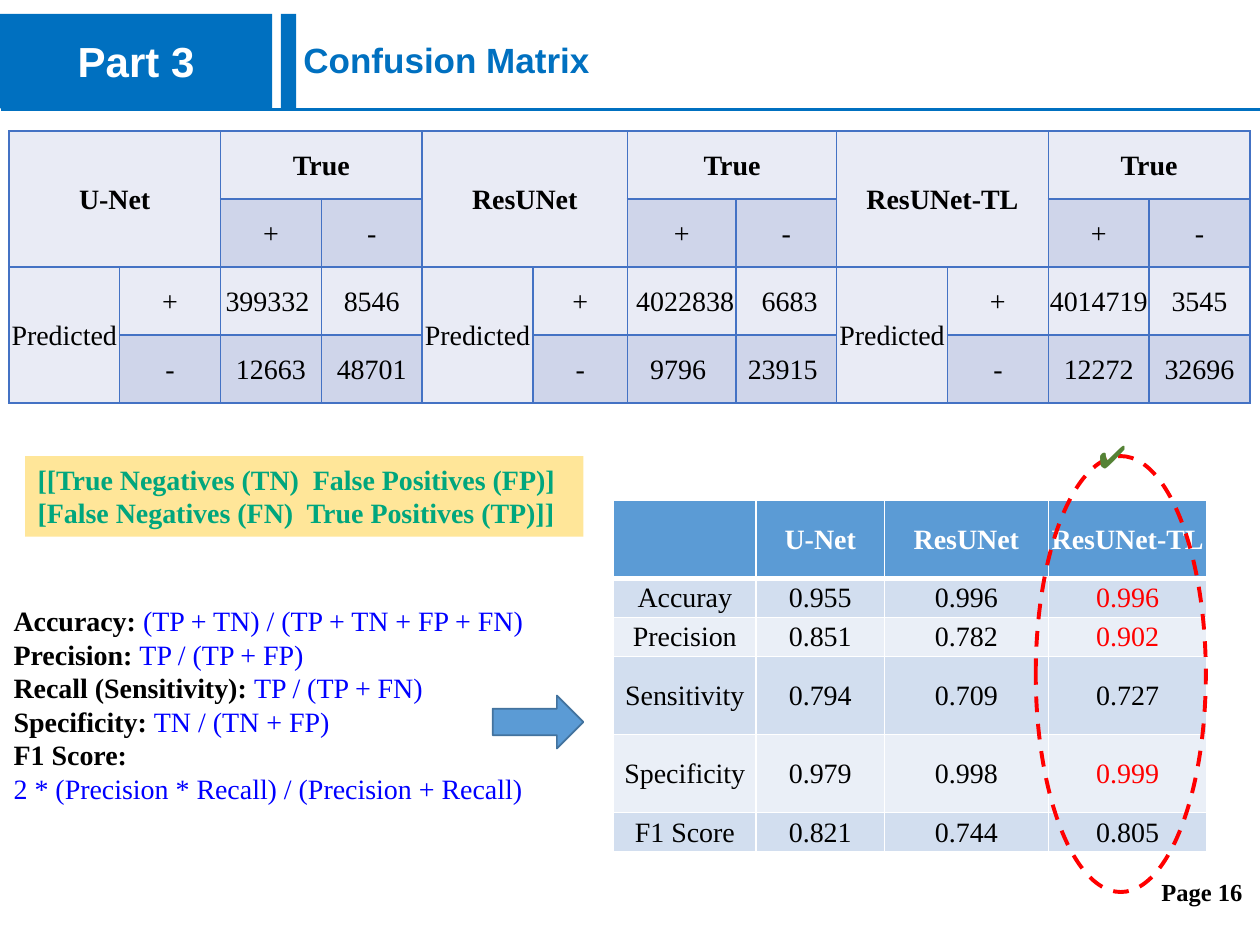
from dataclasses import dataclass

from lxml import etree
from pptx import Presentation
from pptx import util as u
from pptx.dml.color import RGBColor
from pptx.enum import dml, shapes, text
from pptx.oxml.ns import qn

COLUMNS, ROWS = 100, 75
CELL = u.Inches(10) // COLUMNS  # the grid is square

COLORS = {
    "brand": "0070C0", "white": "FFFFFF", "black": "000000",
    "formula": "0000FF", "best": "FF0000", "tick": "548235",
    "legend": "FFE699", "legend_text": "00A67D",
    "matrix_line": "4472C4", "matrix_odd": "E9EBF5", "matrix_even": "CFD5EA",
    "accent": "5B9BD5", "accent_line": "43739E",
    "score_odd": "D2DEEF", "score_even": "EAEFF7",
}
SANS, SERIF = "Arial", "Times New Roman"

# model, its four column widths, counts for predicted + and -
MODELS = [
    ("U-Net", (8.8, 8, 8, 8), (("399332 ", "8546"), ("12663", "48701"))),
    ("ResUNet", (8.8, 7.5, 8.6, 8), ((" 4022838", " 6683"), ("9796 ", "23915 "))),
    ("ResUNet-TL", (8.8, 8, 8, 8), (("4014719", "3545"), ("12272", "32696"))),
]
# metric, row height, score of each model, whether the last model is best
SCORES = [
    ("Accuray", 3.1, ("0.955", "0.996", "0.996"), True),
    ("Precision", 3.1, ("0.851", "0.782", "0.902"), True),
    ("Sensitivity", 6.2, ("0.794", "0.709", "0.727"), False),
    ("Specificity", 6.2, ("0.979", "0.998", "0.999"), True),
    ("F1 Score", 3.1, ("0.821", "0.744", "0.805"), False),
]
FORMULAS = [
    ("Accuracy: ", "(TP + TN) / (TP + TN + FP + FN)"),
    ("Precision: ", "TP / (TP + FP)"),
    ("Recall (Sensitivity): ", "TP / (TP + FN)"),
    ("Specificity: ", "TN / (TN + FP)"),
    ("F1 Score:", ""),
    ("", "2 * (Precision * Recall) / (Precision + Recall)"),
]


@dataclass
class Box:
    """An area in grid columns and rows."""
    x: float
    y: float
    w: float
    h: float

    def area(self, dx, dy, w, h):
        return Box(self.x + dx, self.y + dy, w, h)

    def emu(self):
        return [grid(n) for n in (self.x, self.y, self.w, self.h)]


def grid(n):
    return round(n * CELL)


def rgb(name):
    return RGBColor.from_string(COLORS[name])


def add_run(paragraph, words, color, size=16, bold=False, font=SERIF):
    run = paragraph.add_run()
    run.text = words
    run.font.name, run.font.size, run.font.bold = font, u.Pt(size), bold
    run.font.color.rgb = rgb(color)


def add_block(slide, box, kind, fill=None, line=None, width=1):
    block = slide.shapes.add_shape(kind, *box.emu())
    block.shadow.inherit = False
    if fill:
        block.fill.solid()
        block.fill.fore_color.rgb = rgb(fill)
    else:
        block.fill.background()
    if line:
        block.line.color.rgb = rgb(line)
        block.line.width = u.Pt(width)
    else:
        block.line.fill.background()
    return block


def add_label(slide, box, words, color, wrap=True, align=None, **style):
    frame = slide.shapes.add_textbox(*box.emu()).text_frame
    frame.word_wrap = wrap
    frame.paragraphs[0].alignment = align
    add_run(frame.paragraphs[0], words, color, **style)


def add_grid_table(slide, box, widths, heights):
    table = slide.shapes.add_table(len(heights), len(widths), *box.emu()).table
    table.first_row = table.horz_banding = False
    for column, width in zip(table.columns, widths):
        column.width = grid(width)
    for row, height in zip(table.rows, heights):
        row.height = grid(height)
    return table


def paint_cell(cell, fill, line, bottom=1):
    properties = cell._tc.get_or_add_tcPr()
    for side, width in (("L", 1), ("R", 1), ("T", 1), ("B", bottom)):
        edge = etree.SubElement(properties, qn(f"a:ln{side}"), w=str(u.Pt(width)))
        solid = etree.SubElement(edge, qn("a:solidFill"))
        etree.SubElement(solid, qn("a:srgbClr"), val=COLORS[line])
    cell.fill.solid()
    cell.fill.fore_color.rgb = rgb(fill)


def write_cell(cell, words, color="black", bold=False):
    cell.vertical_anchor = text.MSO_ANCHOR.MIDDLE
    cell.margin_left = cell.margin_right = cell.margin_top = u.Inches(0.01)
    cell.margin_bottom = 0
    paragraph = cell.text_frame.paragraphs[0]
    paragraph.alignment = text.PP_ALIGN.CENTER
    add_run(paragraph, words, color, bold=bold)


def header(slide, box):
    rectangle = shapes.MSO_SHAPE.RECTANGLE
    chapter = add_block(slide, box.area(0, 0, 21.6, 7.5), rectangle, "brand").text_frame
    chapter.vertical_anchor = text.MSO_ANCHOR.MIDDLE
    chapter.paragraphs[0].alignment = text.PP_ALIGN.CENTER
    add_run(chapter.paragraphs[0], "Part 3", "white", 24, True, SANS)
    add_block(slide, box.area(22.3, 0, 1.2, 7.5), rectangle, "brand")
    add_label(slide, box.area(23.1, 1.5, 77, 4.4), "Confusion Matrix", "brand",
              align=text.PP_ALIGN.JUSTIFY, size=20, bold=True, font=SANS)
    left, bottom = grid(box.x + 0.1), grid(box.y + box.h)
    rule = slide.shapes.add_connector(
        shapes.MSO_CONNECTOR.STRAIGHT, left, bottom, left + grid(box.w), bottom)
    rule.line.color.rgb = rgb("brand")
    rule.line.width = u.Pt(2)
    etree.SubElement(rule._element.spPr, qn("a:effectLst"))


def confusion_matrices(slide, box):
    widths = [width for _, columns, _ in MODELS for width in columns]
    table = add_grid_table(slide, box, widths, [box.h / 4] * 4)
    for row in range(4):
        for column in range(len(widths)):
            paint_cell(table.cell(row, column),
                       "matrix_even" if row % 2 else "matrix_odd", "matrix_line")
    for index, (model, _, counts) in enumerate(MODELS):
        first = 4 * index
        for top, left, bottom, right in ((0, 0, 1, 1), (0, 2, 0, 3), (2, 0, 3, 0)):
            table.cell(top, first + left).merge(table.cell(bottom, first + right))
        write_cell(table.cell(0, first), model, bold=True)
        write_cell(table.cell(0, first + 2), "True", bold=True)
        write_cell(table.cell(2, first), "Predicted ")
        for i, sign in enumerate("+-"):
            write_cell(table.cell(1, first + 2 + i), sign)
            write_cell(table.cell(2 + i, first + 1), sign)
            for j, count in enumerate(counts[i]):
                write_cell(table.cell(2 + i, first + 2 + j), count)


def legend(slide, box):
    frame = add_block(slide, box, shapes.MSO_SHAPE.RECTANGLE, "legend").text_frame
    frame.vertical_anchor = text.MSO_ANCHOR.TOP
    lines = ("[[True Negatives (TN)  False Positives (FP)]",
             "[False Negatives (FN)  True Positives (TP)]]")
    for i, line in enumerate(lines):
        paragraph = frame.add_paragraph() if i else frame.paragraphs[0]
        paragraph.alignment = text.PP_ALIGN.LEFT
        add_run(paragraph, line, "legend_text", bold=True)


def formulas(slide, box):
    frame = slide.shapes.add_textbox(*box.emu()).text_frame
    frame.word_wrap = True
    for i, (metric, formula) in enumerate(FORMULAS):
        paragraph = frame.add_paragraph() if i else frame.paragraphs[0]
        if metric:
            add_run(paragraph, metric, "black", bold=True)
        if formula:
            add_run(paragraph, formula, "formula")
    add_block(slide, box.area(39, 7.8, 7.2, 4.2), shapes.MSO_SHAPE.RIGHT_ARROW,
              "accent", "accent_line")


def scores(slide, box):
    """Score table with the chosen model ringed and ticked."""
    heights = [6.2] + [height for _, height, _, _ in SCORES]
    table = add_grid_table(slide, box, (11.3, 10.2, 13, 12.6), heights)
    for column in range(4):
        paint_cell(table.cell(0, column), "accent", "white", bottom=3)
    for column, (model, _, _) in enumerate(MODELS, 1):
        write_cell(table.cell(0, column), model, "white", True)
    for row, (metric, _, values, best) in enumerate(SCORES, 1):
        for column, words in enumerate((metric, *values)):
            cell = table.cell(row, column)
            paint_cell(cell, "score_odd" if row % 2 else "score_even", "white")
            write_cell(cell, words, "best" if best and column == 3 else "black")
    ring = add_block(slide, box.area(33.5, -3.5, 13.5, 34.6),
                     shapes.MSO_SHAPE.OVAL, line="best", width=2.25)
    ring.line.dash_style = dml.MSO_LINE.DASH
    add_label(slide, box.area(37.5, -5.5, 5.5, 4), "✔", "tick", wrap=False,
              size=18, font=SANS)


def main():
    deck = Presentation()
    deck.slide_width, deck.slide_height = grid(COLUMNS), grid(ROWS)
    slide = deck.slides.add_slide(deck.slide_layouts[6])
    header(slide, Box(0, 1.1, COLUMNS, 7.6))
    confusion_matrices(slide, Box(0.7, 10.4, 98.6, 21.6))
    legend(slide, Box(2, 36.2, 44.3, 6.4))
    formulas(slide, Box(0.1, 47.4, 50, 17.2))
    scores(slide, Box(48.7, 39.7, 47, 27.9))
    add_label(slide, Box(90.7, 69.1, 9.3, 4), " Page 16", "black", size=14, bold=True)
    deck.save("out.pptx")


if __name__ == "__main__":
    main()
